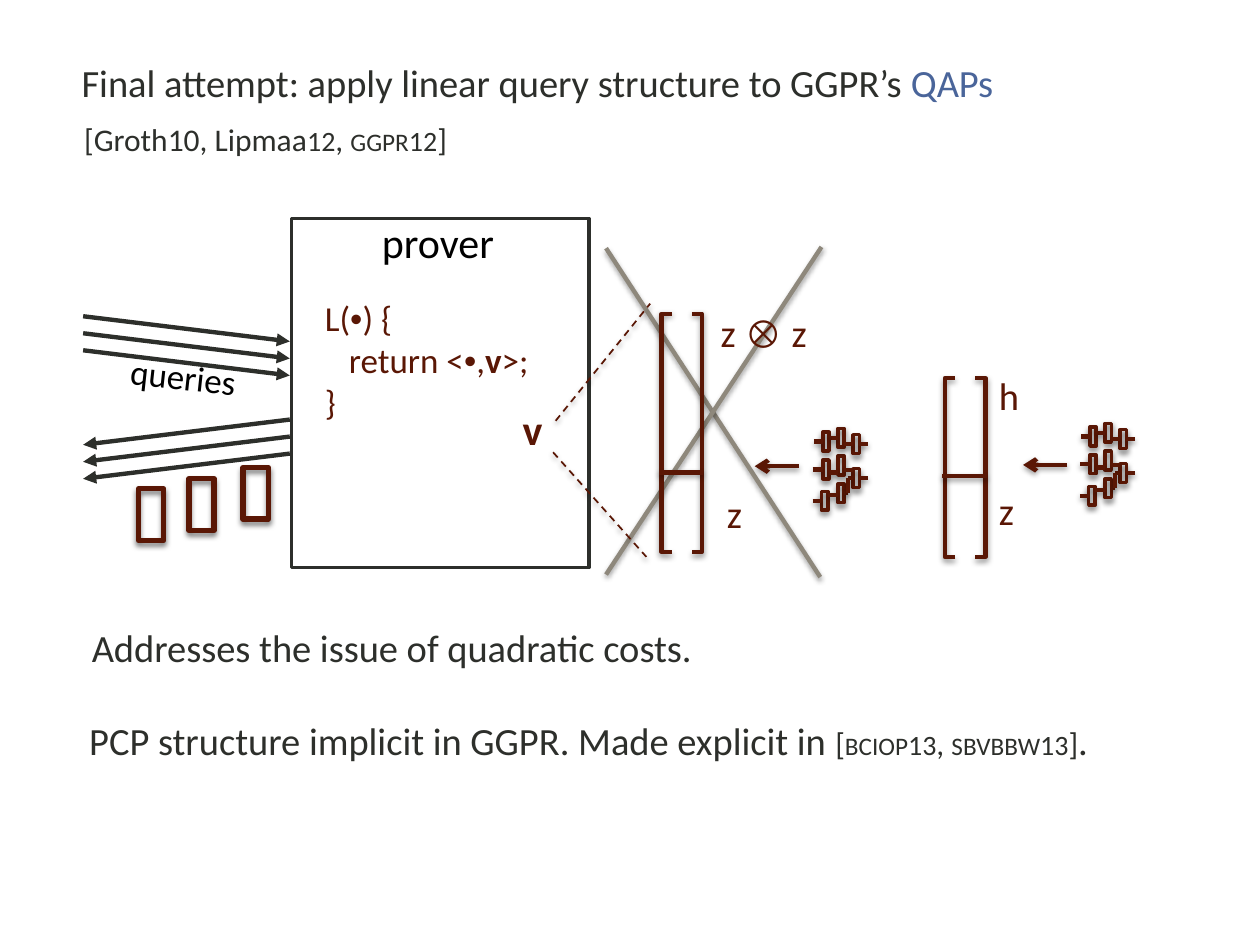
import pptx
import pptx.util
import pptx.dml.color
import pptx.enum.dml
import pptx.enum.shapes
import pptx.enum.text
import pptx.oxml.ns
import lxml.etree

COLS, ROWS = 100, 75
RUST, INK, GREY, BLUE, BLACK = "5A1705", "2D2F2B", "8E887C", "4A659A", "000000"
KIND = pptx.enum.shapes.MSO_SHAPE
CELLS = [(0.8, 0.3), (0.8, 2.5), (2, 2.2), (2, 4.4),
         (3.2, 0.5), (2, 0), (3.2, 3.2), (0.7, 5)]
WIRES = [(0.1, 1.05, 0.8, 1.05, None, 0), (0, 3.25, 0.8, 3.25, None, 1),
         (0, 5.75, 0.7, 5.75, None, 7), (1.3, 3.5, 2, 3.5, None, None),
         (2.5, 1.25, 3.2, 1.25, None, 4), (1.3, 0.75, 1.5, 0.75, None, None),
         (1.2, 5.3, 2, 5.3, None, None), (2.5, 5.15, 2.8, 5.15, 3, None),
         (2.8, 3.95, 3.2, 3.95, None, 6), (2.8, 3.95, 2.8, 5.15, None, None),
         (2.5, 3.3, 3.2, 3.3, None, None), (3.7, 1.25, 4.4, 1.25, 4, None),
         (3.7, 3.95, 4.4, 3.95, 6, None), (1.5, 0.75, 2, 0.75, None, 5)]


def unit(n):
    """Turn a count of grid columns or rows into a length."""
    return pptx.util.Inches(n / 10)


def tint(code):
    """Turn a hex string into a colour."""
    return pptx.dml.color.RGBColor.from_string(code)


def node(parent, tag, **attrs):
    """Append a DrawingML element."""
    return lxml.etree.SubElement(parent, pptx.oxml.ns.qn("a:" + tag), attrs)


def shade(item, glow):
    """Give an item a soft shadow of (opacity, blur, distance), or none."""
    fx = node(item._element.spPr, "effectLst")
    if glow:
        alpha, blur, dist = glow
        drop = node(fx, "outerShdw", blurRad=str(blur), dist=str(dist),
                    dir="5400000", rotWithShape="0")
        node(node(drop, "srgbClr", val=BLACK), "alpha", val=str(alpha * 1000))


def pen(item, code, size):
    """Set the outline of an item."""
    item.line.color.rgb = tint(code)
    item.line.width = pptx.util.Pt(size)


def shape(host, kind, x, y, w, h, size, code=RUST, glow=(50, 38100, 25400)):
    """Add an unfilled shape."""
    item = host.shapes.add_shape(kind, unit(x), unit(y), unit(w), unit(h))
    item.fill.background()
    pen(item, code, size)
    shade(item, glow)
    return item


def line(host, x1, y1, x2, y2, code=RUST, size=2.5, head=None, dash=False,
         glow=(38, 40000, 20000)):
    """Add a straight line, with an arrowhead at its end if named."""
    item = host.shapes.add_connector(pptx.enum.shapes.MSO_CONNECTOR.STRAIGHT,
                                     unit(x1), unit(y1), unit(x2), unit(y2))
    pen(item, code, size)
    if dash:
        item.line.dash_style = pptx.enum.dml.MSO_LINE.DASH
    if head:
        node(item.line._get_or_add_ln(), "tailEnd", type=head)
    shade(item, glow)
    return item


def text(page, x, y, w, h, paras, size, code=RUST, mid=False, turn=0):
    """Add text; a run is a string or (string, changes), a paragraph a list."""
    box = page.shapes.add_textbox(unit(x), unit(y), unit(w), unit(h))
    box.rotation = turn
    frame = box.text_frame
    frame.word_wrap = True
    for i, runs in enumerate(paras):
        para = frame.paragraphs[0] if i == 0 else frame.add_paragraph()
        if mid:
            para.alignment = pptx.enum.text.PP_ALIGN.CENTER
        for part in runs:
            words, how = (part, {}) if isinstance(part, str) else part
            run = para.add_run()
            run.text = words
            font = run.font
            font.name = how.get("font", "Calibri")
            font.size = pptx.util.Pt(how.get("size", size))
            font.bold = how.get("bold", False)
            font.color.rgb = tint(how.get("code", code))
            if how.get("caps"):
                font._element.set("cap", "small")
    return frame


def vector(page, x, y, h, bar):
    """Add a pair of brackets split by a bar."""
    group = page.shapes.add_group_shape()
    glow = (38, 40000, 20000)
    for kind, left in ((KIND.LEFT_BRACKET, x), (KIND.RIGHT_BRACKET, x + 2.4)):
        shape(group, kind, left, y, 0.8, h, 2.5, glow=glow).adjustments[0] = 0
    line(page, x + 3.3, bar, x - 0.2, bar)


def mesh(page, x, y):
    """Add a circuit of small gates joined by wires."""
    group = page.shapes.add_group_shape()
    gates = [shape(group, KIND.RECTANGLE, x + a, y + b, 0.5, 1.5, 2)
             for a, b in CELLS]
    for x1, y1, x2, y2, start, end in WIRES:
        wire = line(group, x + x1, y + y1, x + x2, y + y2)
        if start is not None:
            wire.begin_connect(gates[start], 3)
        if end is not None:
            wire.end_connect(gates[end], 1)


def prose(page):
    """Add the heading, citation and closing statements."""
    def cite(words):
        return words, {"size": 18, "caps": True}

    mark, year = {"size": 18}, {"size": 16}
    text(page, 6.1, 56.4, 91.2, 7.3, [[
        "PCP structure implicit in GGPR. Made explicit in ", ("[", mark),
        cite("bciop"), ("13", year), (", ", mark), cite("sbvbbw"),
        ("13", year), ("]", mark), "."]], 22, INK)
    text(page, 5.7, 9, 40, 6, [[
        "[Groth10, Lipmaa", ("12", year), ", ", cite("ggpr"),
        ("12", year), "]"]], 18, INK)
    text(page, 5.5, 4.2, 93.4, 6.9, [[
        "Final attempt: apply linear query structure to GGPR’s ",
        ("QAPs", {"code": BLUE})]], 22, INK)
    text(page, 6.3, 49, 91.2, 7.3,
         [["Addresses the issue of quadratic costs."]], 22, INK)


def prover(page):
    """Add the prover box with its code, queries and answers."""
    shape(page, KIND.RECTANGLE, 23.15, 17.35, 23.6, 27.7, 2, INK, None)
    text(page, 23, 16.7, 23.5, 5, [["prover"]], 24, BLACK, mid=True)
    dot = ("•", {"font": "Arial"})
    code = text(page, 24.8, 23, 22, 11.1, [
        ["L(", dot, ") {"],
        ["return <", dot, ",", ("v", {"bold": True}), ">;"],
        ["}"]], 20)
    code.paragraphs[1]._p.get_or_add_pPr().set("marL", str(unit(1.9)))
    text(page, 40.5, 31.5, 5.5, 5, [[("v", {"bold": True})]], 24)
    for i in range(3):
        step = 1.35 * i
        line(page, 6.6, 25.1 + step, 23, 27.1 + step, INK,
             head="triangle", glow=None)
        line(page, 23, 33.3 + step, 6.6, 35.3 + step, INK,
             head="triangle", glow=None)
    for x, y in ((11, 38.8), (15, 38), (19.3, 37.1)):
        shape(page, KIND.RECTANGLE, x, y, 2, 4.1, 3)
    text(page, 8.7, 27.7, 11.7, 4.4, [["queries"]], 20, BLACK, True, 6.3)


def proofs(page):
    """Add the crossed-out proof vector and the one that replaces it."""
    cross = page.shapes.add_group_shape()
    line(cross, 48.1, 19.7, 65.1, 45.8, GREY)
    line(cross, 65.2, 19.6, 48.1, 45.6, GREY)
    vector(page, 52.5, 24.9, 18.9, 37.5)
    vector(page, 75, 30, 14.2, 37.8)
    mesh(page, 64.5, 34)
    mesh(page, 85.7, 33.6)
    line(page, 63.4, 37, 59.9, 37, head="arrow")
    line(page, 84.7, 36.9, 81.2, 36.9, head="arrow")
    text(page, 56.2, 24, 9.2, 4.7,
         [["z ", ("⊗ ", {"font": "Arial Narrow"}), "z"]], 22)
    for x, y, word in ((56.7, 38.4, "z"), (78.3, 38.2, "z"), (78.3, 29, "h")):
        text(page, x, y, 5.5, 4.7, [[word]], 22)
    line(page, 44.1, 33.4, 51.6, 24.1, size=1, dash=True)
    line(page, 43.9, 35.9, 51.3, 44.2, size=1, dash=True)


def main():
    """Build and save the slide."""
    deck = pptx.Presentation()
    deck.slide_width, deck.slide_height = unit(COLS), unit(ROWS)
    page = deck.slides.add_slide(deck.slide_layouts[6])
    prose(page)
    prover(page)
    proofs(page)
    deck.save("out.pptx")


if __name__ == "__main__":
    main()
